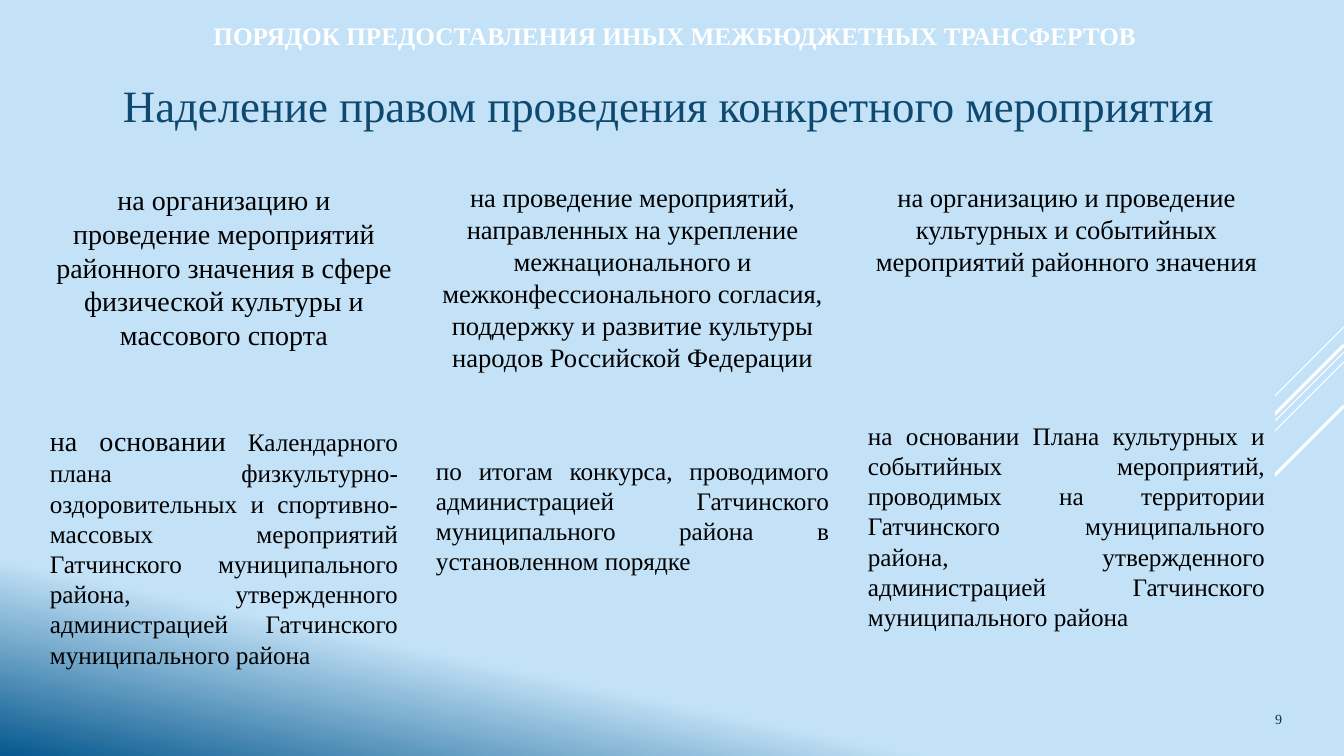
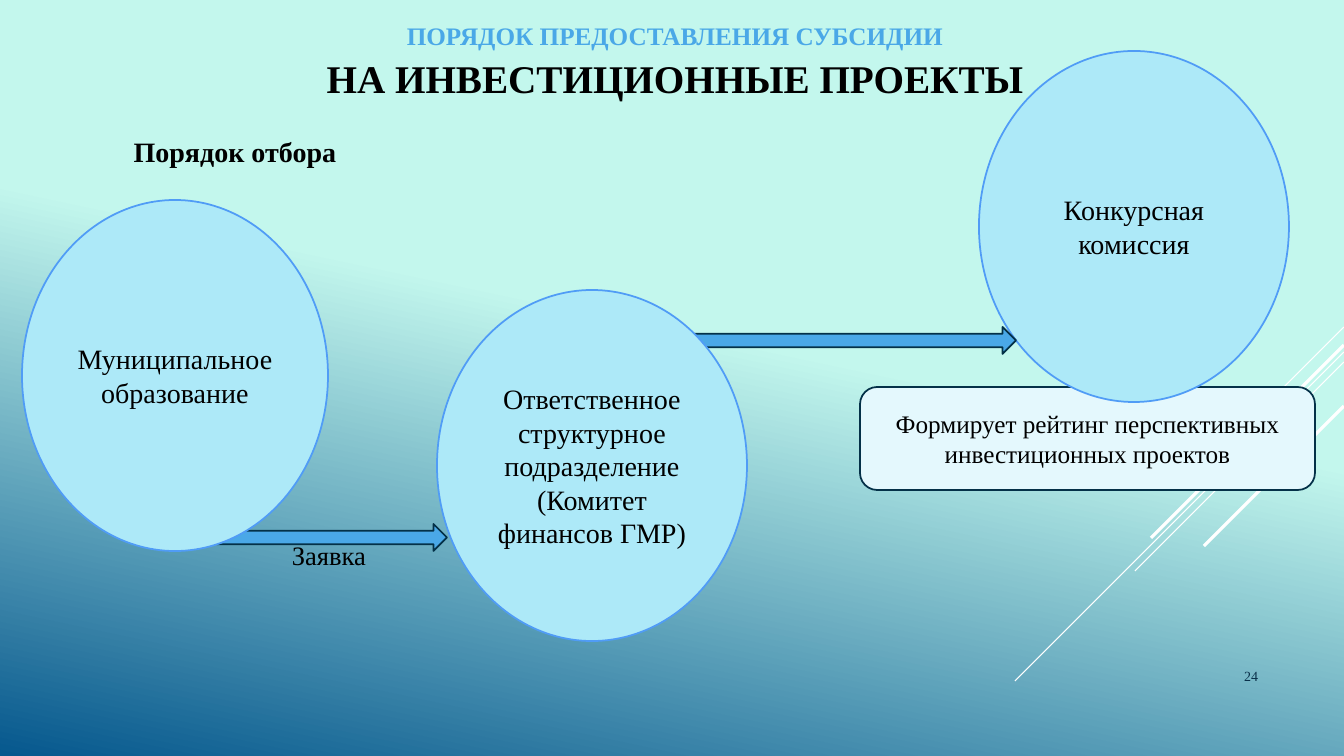
from pptx import Presentation
from pptx.dml.color import RGBColor
from pptx.enum.shapes import MSO_CONNECTOR, MSO_SHAPE
from pptx.enum.text import MSO_ANCHOR, PP_ALIGN
from pptx.oxml.ns import qn
from pptx.util import Emu, Pt
from lxml import etree

# Shared look
FONT = "Times New Roman"
WHITE = RGBColor(0xFF, 0xFF, 0xFF)
BLACK = RGBColor(0, 0, 0)
PALE = RGBColor(0xC3, 0xE2, 0xF7)
MINT = RGBColor(0xC3, 0xF7, 0xED)
DEEP = RGBColor(0x06, 0x58, 0x8E)
NAVY = RGBColor(0x0F, 0x49, 0x6F)
INK = RGBColor(0x0A, 0x30, 0x4A)
BLUE = RGBColor(0x4A, 0xA8, 0xE7)
EDGE = RGBColor(0x04, 0x31, 0x48)
ICE = RGBColor(0xE4, 0xF8, 0xFD)
SKY = RGBColor(0xAD, 0xE9, 0xF8)
RIM = RGBColor(0x50, 0x9C, 0xF6)

LEFT, MID, RIGHT, FULL = (PP_ALIGN.LEFT, PP_ALIGN.CENTER,
                          PP_ALIGN.RIGHT, PP_ALIGN.JUSTIFY)
TOP, CORE, BASE = MSO_ANCHOR.TOP, MSO_ANCHOR.MIDDLE, MSO_ANCHOR.BOTTOM
RECT, ROUND = MSO_SHAPE.RECTANGLE, MSO_SHAPE.ROUNDED_RECTANGLE
OVAL, ARROW = MSO_SHAPE.OVAL, MSO_SHAPE.RIGHT_ARROW
LINE = MSO_CONNECTOR.STRAIGHT

WIDE, HIGH = 1344, 756
# Diagonal rays from the right edge: start height, run, weight
RAYS = [(327, 101, 0.75), (352, 329, 0.75), (362, 209, 0.75),
        (345, 193, 2.25), (406, 140, 2.25)]


def px(num):
    return Emu(round(num * 914400 / 100.8))


def place(box):
    return [px(num) for num in box]


def write(shape, runs, align=MID, anchor=TOP, pad=5):
    """Fill a shape with one paragraph; a run is (text, size, colour, bold)."""
    frame = shape.text_frame
    frame.word_wrap = True
    frame.vertical_anchor = anchor
    frame.margin_top = px(pad)
    para = frame.paragraphs[0]
    para.alignment = align
    for text, size, tint, bold in runs:
        run = para.add_run()
        run.text = text
        run.font.name = FONT
        run.font.size = Pt(size)
        run.font.bold = bold
        run.font.color.rgb = tint


def label(slide, box, text, size, tint, bold=False, align=MID, anchor=TOP):
    shape = slide.shapes.add_textbox(*place(box))
    write(shape, [(text, size, tint, bold)], align, anchor)


def draw(slide, kind, box, fill, rim):
    shape = slide.shapes.add_shape(kind, *place(box))
    shape.shadow.inherit = False
    shape.fill.solid()
    shape.fill.fore_color.rgb = fill
    shape.line.color.rgb = rim
    shape.line.width = Pt(1.25)
    return shape


def node(slide, kind, box, text, size, fill, rim):
    shape = draw(slide, kind, box, fill, rim)
    write(shape, [(text, size, BLACK, False)], anchor=CORE)


def cell(slide, box, runs, align, pad):
    """A panel that shows the slide background and hides the rays."""
    shape = slide.shapes.add_shape(RECT, *place(box))
    shape.shadow.inherit = False
    shape.line.fill.background()
    shape.element.set("useBgFill", "1")
    write(shape, [(text, size, BLACK, False) for text, size in runs],
          align, pad=pad)


def base(deck, light, stop):
    """A blank slide with gradient background and rays."""
    slide = deck.slides.add_slide(deck.slide_layouts[6])
    fill = slide.background.fill
    fill.gradient()
    fill.gradient_angle = 258
    for mark, spot, tint in zip(fill.gradient_stops, (stop, 1), (light, DEEP)):
        mark.position = spot
        mark.color.rgb = tint
    for top, run, weight in RAYS:
        ray = slide.shapes.add_connector(
            LINE, *place((WIDE, top, WIDE - run, top + run)))
        ray.line.color.rgb = WHITE
        ray.line.width = Pt(weight)
        etree.SubElement(ray.element.spPr, qn("a:effectLst"))
    return slide


def head(slide, text, tint):
    label(slide, (75, 15, 1200, 40), text, 18, tint, True)


def folio(slide, box, text):
    label(slide, box, text, 10, INK, align=RIGHT, anchor=BASE)


def rights(deck):
    slide = base(deck, PALE, 0.81)
    head(slide, "ПОРЯДОК ПРЕДОСТАВЛЕНИЯ ИНЫХ МЕЖБЮДЖЕТНЫХ ТРАНСФЕРТОВ", WHITE)
    label(slide, (71, 73, 1196, 90),
          "Наделение правом проведения конкретного мероприятия", 32, NAVY)

    # Columns: left, width, purpose and ground, each with its top inset
    cols = [
        (40, 368,
         [("на организацию и проведение мероприятий районного значения "
           "в сфере физической культуры и массового спорта", 20)], 7,
         [("на основании ", 20),
          ("Календарного плана физкультурно-оздоровительных и "
           "спортивно-массовых мероприятий Гатчинского муниципального "
           "района, утвержденного администрацией Гатчинского "
           "муниципального района", 18)], 46),
        (426, 413,
         [("на проведение мероприятий, направленных на укрепление "
           "межнационального и межконфессионального согласия, поддержку "
           "и развитие культуры народов Российской Федерации", 19)], 5,
         [("по итогам конкурса, проводимого администрацией Гатчинского "
           "муниципального района в установленном порядке", 18)], 77),
        (858, 417,
         [("на организацию и проведение культурных и событийных "
           "мероприятий районного значения", 19)], 5,
         [("на основании Плана культурных и событийных мероприятий, "
           "проводимых на территории Гатчинского муниципального района, "
           "утвержденного администрацией Гатчинского муниципального "
           "района", 18)], 42),
    ]
    for left, wide, goal, gap, ground, drop in cols:
        cell(slide, (left, 176, wide, 202), goal, MID, gap)
        cell(slide, (left, 378, wide, 324), ground, FULL, drop)
    folio(slide, (1142, 615, 150, 117), "9")


def choice(deck):
    slide = base(deck, MINT, 0.45)
    head(slide, "ПОРЯДОК ПРЕДОСТАВЛЕНИЯ СУБСИДИИ", BLUE)
    label(slide, (75, 55, 1200, 51), "НА ИНВЕСТИЦИОННЫЕ ПРОЕКТЫ", 28, BLACK,
          True, anchor=BASE)
    label(slide, (58, 130, 354, 45), "Порядок отбора", 20, BLACK, True)
    folio(slide, (1142, 615, 126, 74), "24")

    # Flow, from back to front
    draw(slide, ARROW, (217, 524, 230, 27), BLUE, EDGE)
    label(slide, (282, 534, 102, 42), "Заявка", 19, BLACK, align=LEFT)
    node(slide, ROUND, (860, 387, 455, 103),
         "Формирует рейтинг перспективных инвестиционных проектов",
         18, ICE, EDGE)
    node(slide, OVAL, (22, 200, 306, 351), "Муниципальное образование",
         20, SKY, RIM)
    node(slide, OVAL, (979, 51, 310, 351), "Конкурсная комиссия",
         20, SKY, RIM)
    draw(slide, ARROW, (693, 327, 323, 27), BLUE, EDGE)
    node(slide, OVAL, (437, 290, 310, 351),
         "Ответственное структурное подразделение (Комитет финансов ГМР)",
         20, SKY, RIM)


def main():
    deck = Presentation()
    deck.slide_width, deck.slide_height = px(WIDE), px(HIGH)
    rights(deck)
    choice(deck)
    deck.save("out.pptx")


if __name__ == "__main__":
    main()
